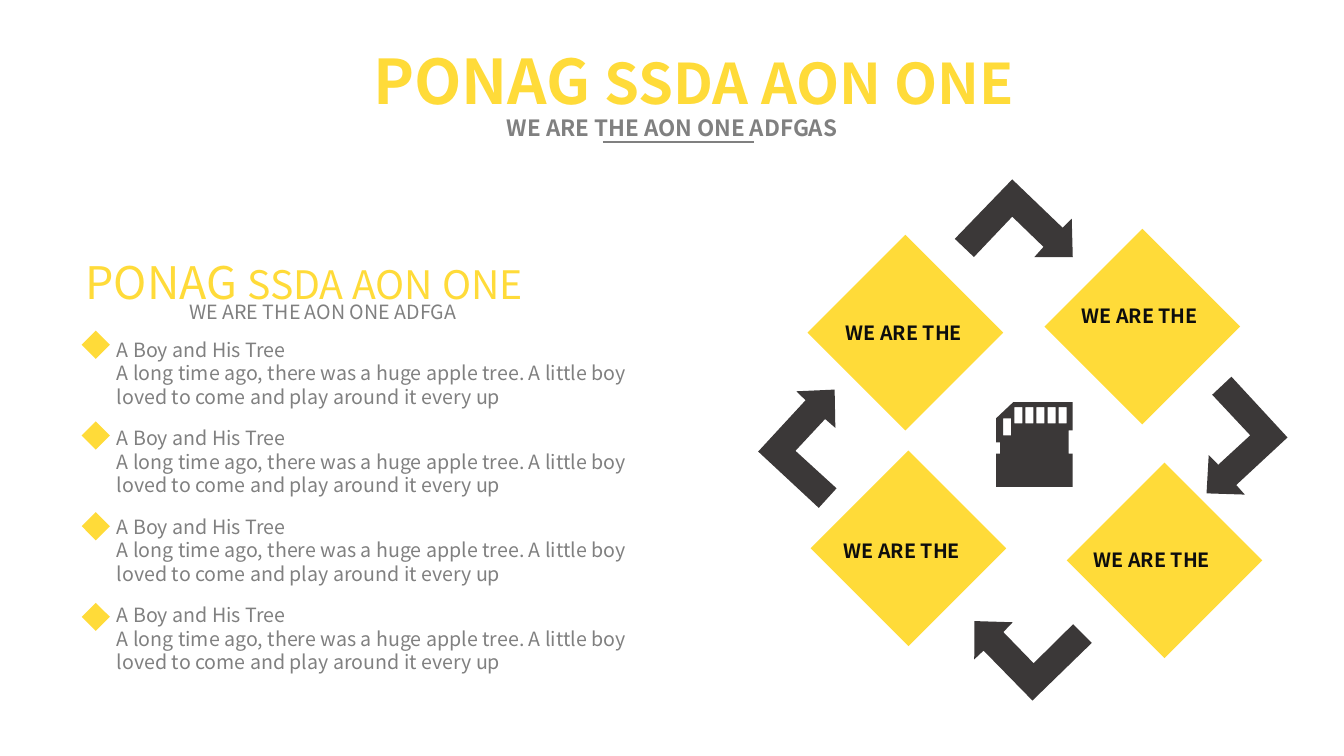
from math import cos, radians, sin

from pptx import Presentation
from pptx.dml.color import RGBColor
from pptx.enum.shapes import MSO_CONNECTOR, MSO_SHAPE
from pptx.enum.text import MSO_ANCHOR, MSO_AUTO_SIZE, PP_ALIGN
from pptx.oxml.ns import qn
from pptx.util import Inches, Pt

YELLOW = RGBColor(0xFF, 0xDB, 0x39)
GREY = RGBColor(0x80, 0x80, 0x80)
CHARCOAL = RGBColor(0x3B, 0x38, 0x38)
BLACK = RGBColor(0x0D, 0x0D, 0x0D)
FONT = "Noto Sans CJK SC"

ITEM_HEADING = "A Boy and His Tree"
ITEM_TEXT = ("A long time ago, there was a huge apple tree. A little boy "
             "loved to come and play around it every up")
ITEM_COUNT = 4
ITEM_GAP = Pt(12.8)
BULLET_PITCH = 0.9

DIAMOND_SIZE = 1.94
# Diamond corner in the cycle box, then label corner in the diamond
DIAMONDS = [((0.51, 0.58), (0.28, 0.80)), ((2.86, 0.52), (0.27, 0.70)),
            ((0.54, 2.72), (0.23, 0.83)), ((3.08, 2.84), (0.17, 0.80))]
# Elbow corner in the cycle box, then turn in degrees
ARROWS = [((2.54, 0.03), 0), ((5.27, 2.59), 93.3),
          ((2.74, 5.20), 181.8), ((0.02, 2.73), -91.1)]
# Arrow outline measured from its elbow corner
ARROW_OUTLINE = [(0, 0), (0.50, 0.48), (0.59, 0.39), (0.60, 0.77), (0.22, 0.77),
                 (0.31, 0.67), (0, 0.37), (-0.38, 0.77), (-0.57, 0.59)]
CARD_OUTLINE = [(0.17, 0), (0.76, 0), (0.76, 0.28), (0.72, 0.28), (0.72, 0.51),
                (0.76, 0.51), (0.76, 0.84), (0, 0.84), (0, 0.51), (0.04, 0.51),
                (0.04, 0.40), (0, 0.40), (0, 0.16)]


def place(shape, left, top, width, height):
    shape.left, shape.top = Inches(left), Inches(top)
    shape.width, shape.height = Inches(width), Inches(height)


def paint(shape, color):
    shape.fill.solid()
    shape.fill.fore_color.rgb = color
    shape.line.fill.background()
    shape.shadow.inherit = False


def format_run(run, size, color, bold=False):
    run.font.name = FONT
    run.font.size = Pt(size)
    run.font.bold = bold
    run.font.color.rgb = color


def write_line(shape, parts, color, bold=False):
    """Fill a shape with one unwrapped line made of (text, size) parts."""
    frame = shape.text_frame
    frame.word_wrap = False
    frame.auto_size = MSO_AUTO_SIZE.NONE
    frame.vertical_anchor = MSO_ANCHOR.TOP
    paragraph = frame.paragraphs[0]
    paragraph.alignment = PP_ALIGN.LEFT
    for text, size in parts:
        run = paragraph.add_run()
        run.text = text
        format_run(run, size, color, bold)


def add_line_of_text(slide, box, parts, color, bold=False):
    text_box = slide.shapes.add_textbox(*map(Inches, box))
    write_line(text_box, parts, color, bold)


def add_diamond(slide, left, top, size):
    diamond = slide.shapes.add_shape(
        MSO_SHAPE.DIAMOND, *map(Inches, (left, top, size, size)))
    paint(diamond, YELLOW)


def add_outline(slide, left, top, contours):
    """Draw closed contours, given from (left, top), as one dark shape."""
    builder = None
    for contour in contours:
        points = [(Inches(left + x), Inches(top + y)) for x, y in contour]
        if builder is None:
            builder = slide.shapes.build_freeform(*points[0])
        else:
            builder.move_to(*points[0])
        builder.add_line_segments(points[1:], close=True)
    paint(builder.convert_to_shape(), CHARCOAL)


def add_header(slide, left, top, width):
    title = slide.shapes.title
    place(title, left, top, width, 0.84)
    write_line(title, [("PONAG ", 44), ("SSDA AON ONE", 40)], YELLOW, bold=True)
    add_line_of_text(slide, (left + 1.33, top + 0.7, 3.8, 0.37),
                     [("WE ARE THE AON ONE ADFGAS", 16)], GREY, bold=True)
    rule_left, rule_top = left + 2.38, top + 1.03
    rule = slide.shapes.add_connector(
        MSO_CONNECTOR.STRAIGHT,
        *map(Inches, (rule_left, rule_top, rule_left + 1.5, rule_top)))
    rule.line.color.rgb = GREY
    rule.line.width = Pt(1)
    properties = rule._element.spPr
    properties.append(properties.makeelement(qn("a:effectLst"), {}))


def remove_bullet(paragraph):
    properties = paragraph._p.get_or_add_pPr()
    properties.set("marL", "0")
    properties.set("indent", "0")
    properties.append(properties.makeelement(qn("a:buNone"), {}))


def add_story_list(slide, left, top, width):
    add_line_of_text(slide, (left - 0.06, top, 5.05, 0.64),
                     [("PONAG ", 32), ("SSDA AON ONE", 28)], YELLOW)
    add_line_of_text(slide, (left + 0.97, top + 0.45, 3.11, 0.34),
                     [("WE ARE THE AON ONE ADFGA", 14)], GREY)
    body = slide.placeholders[1]
    place(body, left + 0.25, top + 0.82, width - 0.25, 3.46)
    frame = body.text_frame
    frame.auto_size = MSO_AUTO_SIZE.NONE
    frame.text = "\n".join([ITEM_HEADING, ITEM_TEXT] * ITEM_COUNT)
    for index, paragraph in enumerate(frame.paragraphs):
        starts_item = index % 2 == 0 and index > 0
        paragraph.space_before = ITEM_GAP if starts_item else Pt(0)
        paragraph.line_spacing = 1.0
        remove_bullet(paragraph)
        format_run(paragraph.runs[0], 14, GREY)
    for index in range(ITEM_COUNT):
        add_diamond(slide, left, top + 0.8 + index * BULLET_PITCH, 0.28)


def rectangle(left, top, width, height):
    right, bottom = left + width, top + height
    return [(left, top), (left, bottom), (right, bottom), (right, top)]


def add_memory_card(slide, left, top):
    contacts = [rectangle(0.18 + column * 0.11, 0.05, 0.08, 0.16)
                for column in range(5)]
    notch = rectangle(0.07, 0.16, 0.08, 0.17)
    add_outline(slide, left, top, [CARD_OUTLINE, notch, *contacts])


def turn(points, degrees):
    cosine, sine = cos(radians(degrees)), sin(radians(degrees))
    return [(x * cosine - y * sine, x * sine + y * cosine) for x, y in points]


def add_cycle(slide, left, top):
    for (x, y), (label_x, label_y) in DIAMONDS:
        add_diamond(slide, left + x, top + y, DIAMOND_SIZE)
        add_line_of_text(
            slide, (left + x + label_x, top + y + label_y, 1.43, 0.34),
            [("WE ARE THE", 14)], BLACK, bold=True)
    for (x, y), degrees in ARROWS:
        add_outline(slide, left + x, top + y, [turn(ARROW_OUTLINE, degrees)])
    add_memory_card(slide, left + 2.38, top + 2.24)


def main():
    presentation = Presentation()
    presentation.slide_width = Inches(13.33)
    presentation.slide_height = Inches(7.5)
    slide = presentation.slides.add_slide(presentation.slide_layouts[1])
    add_header(slide, 3.6, 0.38, 7.3)
    add_story_list(slide, 0.81, 2.48, 5.99)
    add_cycle(slide, 7.5, 1.75)
    presentation.save("out.pptx")


if __name__ == "__main__":
    main()
